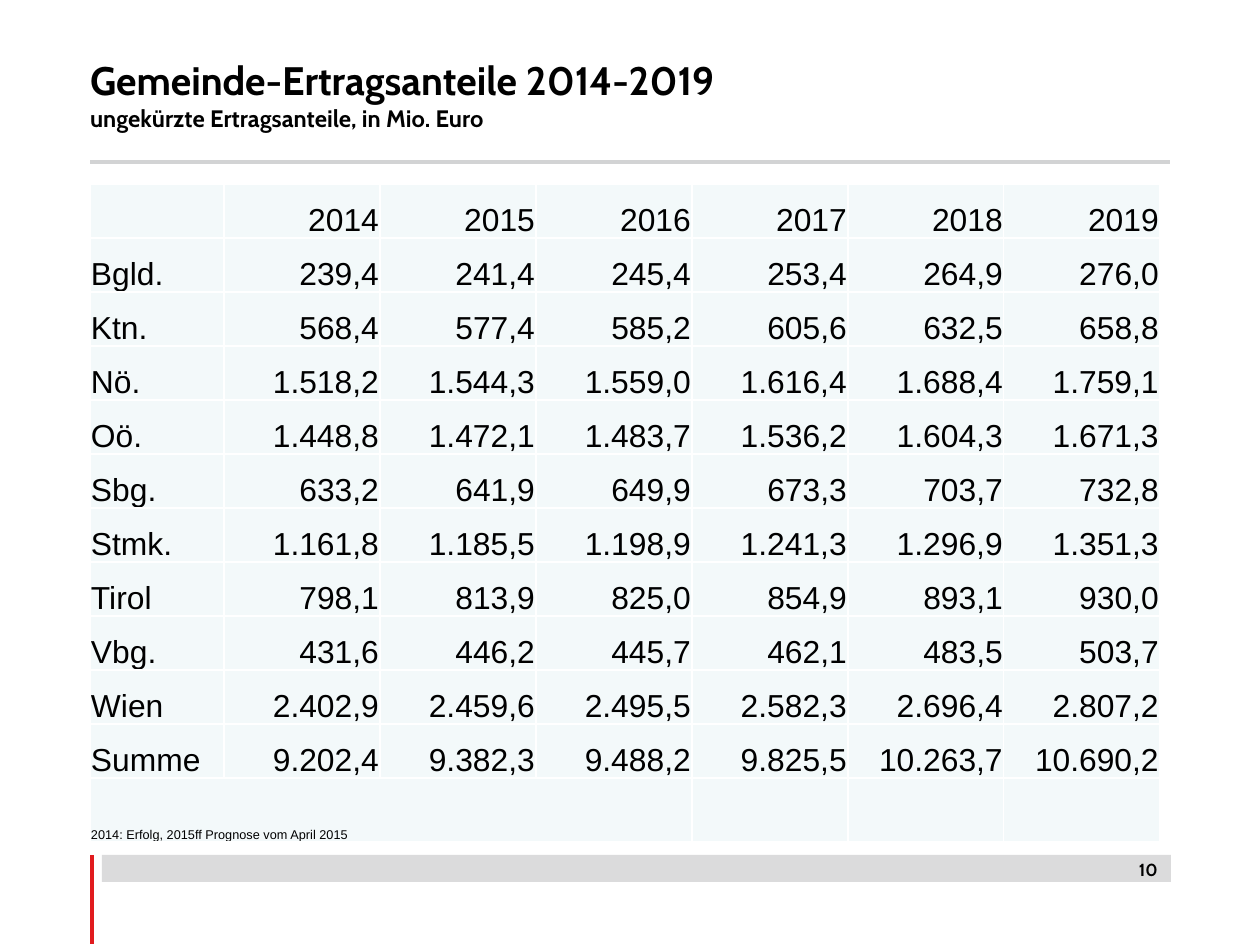
from lxml.etree import SubElement
from pptx import Presentation
from pptx.dml.color import RGBColor
from pptx.enum.shapes import MSO_CONNECTOR, MSO_SHAPE
from pptx.enum.text import MSO_ANCHOR, MSO_AUTO_SIZE, PP_ALIGN
from pptx.oxml import parse_xml
from pptx.oxml.ns import nsdecls, qn
from pptx.util import Pt

EMU_PER_PX = 8000
BLACK = RGBColor(0x00, 0x00, 0x00)
WHITE = RGBColor(0xFF, 0xFF, 0xFF)
GREY = RGBColor(0xD2, 0xD3, 0xD4)
RED = RGBColor(0xE1, 0x1B, 0x1E)
PALE_BLUE = RGBColor(0xF3, 0xF9, 0xFA)

YEARS = ["", "2014", "2015", "2016", "2017", "2018", "2019"]
REVENUE_SHARES = [
    ["Bgld.", "239,4", "241,4", "245,4", "253,4", "264,9", "276,0"],
    ["Ktn.", "568,4", "577,4", "585,2", "605,6", "632,5", "658,8"],
    ["Nö.", "1.518,2", "1.544,3", "1.559,0", "1.616,4", "1.688,4", "1.759,1"],
    ["Oö.", "1.448,8", "1.472,1", "1.483,7", "1.536,2", "1.604,3", "1.671,3"],
    ["Sbg.", "633,2", "641,9", "649,9", "673,3", "703,7", "732,8"],
    ["Stmk.", "1.161,8", "1.185,5", "1.198,9", "1.241,3", "1.296,9", "1.351,3"],
    ["Tirol", "798,1", "813,9", "825,0", "854,9", "893,1", "930,0"],
    ["Vbg.", "431,6", "446,2", "445,7", "462,1", "483,5", "503,7"],
    ["Wien", "2.402,9", "2.459,6", "2.495,5", "2.582,3", "2.696,4", "2.807,2"],
    ["Summe", "9.202,4", "9.382,3", "9.488,2", "9.825,5", "10.263,7", "10.690,2"],
]
SOURCE_NOTE = "2014: Erfolg, 2015ff Prognose vom April 2015"


def px(*lengths):
    return [length * EMU_PER_PX for length in lengths]


def write(paragraph, text, size=20, font="Arial", bold=False, align=PP_ALIGN.LEFT):
    paragraph.alignment = align
    run = paragraph.add_run()
    run.text = text
    run.font.name = font
    run.font.size = Pt(size)
    run.font.bold = bold
    run.font.color.rgb = BLACK


class ReportSlide:
    heading_style = {"font": "Cabin", "bold": True}
    rule_width = Pt(2.84)

    def __init__(self, presentation):
        self.slide = presentation.slides.add_slide(presentation.slide_layouts[5])
        self.shapes = self.slide.shapes

    def rule(self, x1, y1, x2, y2, color):
        line = self.shapes.add_connector(MSO_CONNECTOR.STRAIGHT, *px(x1, y1, x2, y2))
        line.line.color.rgb = color
        line.line.width = self.rule_width
        SubElement(line._element.spPr, qn("a:effectLst"))

    def bar(self, x, y, width, height, color, opacity):
        bar = self.shapes.add_shape(MSO_SHAPE.RECTANGLE, *px(x, y, width, height))
        bar.shadow.inherit = False
        bar.line.fill.background()
        bar.fill.solid()
        bar.fill.fore_color.rgb = color
        srgb = bar._element.spPr.find(".//" + qn("a:srgbClr"))
        SubElement(srgb, qn("a:alpha"), val=str(opacity * 1000))

    def title(self, x, y, width, height, heading, subheading):
        title = self.shapes.title
        title.left, title.top, title.width, title.height = px(x, y, width, height)
        frame = title.text_frame
        frame.margin_left = frame.margin_top = frame.margin_right = frame.margin_bottom = 0
        frame.vertical_anchor = MSO_ANCHOR.MIDDLE
        frame.auto_size = MSO_AUTO_SIZE.NONE
        frame.word_wrap = True
        paragraph = frame.paragraphs[0]
        write(paragraph, heading, size=25, **self.heading_style)
        paragraph.add_line_break()
        write(paragraph, subheading, size=15, **self.heading_style)

    def page_number(self, x, y, width, height, number):
        frame = self.shapes.add_textbox(*px(x, y, width, height)).text_frame
        frame.word_wrap = True
        write(frame.paragraphs[0], number, size=11, align=PP_ALIGN.RIGHT, **self.heading_style)

    def style_cell(self, cell):
        properties = cell._tc.get_or_add_tcPr()
        for side in ("lnL", "lnR", "lnT", "lnB"):
            properties.append(parse_xml(
                f'<a:{side} {nsdecls("a")} w="{Pt(1)}"><a:solidFill>'
                f'<a:srgbClr val="{WHITE}"/></a:solidFill></a:{side}>'))
        cell.fill.solid()
        cell.fill.fore_color.rgb = PALE_BLUE
        cell.vertical_anchor = MSO_ANCHOR.BOTTOM
        cell.margin_left = cell.margin_top = cell.margin_right = EMU_PER_PX
        cell.margin_bottom = 0

    def table(self, x, y, column_widths, row_heights, rows, note, note_span):
        table = self.shapes.add_table(
            len(row_heights), len(column_widths),
            *px(x, y, sum(column_widths), sum(row_heights))).table
        table.first_row = table.horz_banding = False
        for column, width in zip(table.columns, px(*column_widths)):
            column.width = width
        for row, height in zip(table.rows, px(*row_heights)):
            row.height = height
        for cell in table.iter_cells():
            self.style_cell(cell)
        for r, values in enumerate(rows):
            for c, value in enumerate(values):
                if value:
                    align = PP_ALIGN.RIGHT if c else PP_ALIGN.LEFT
                    write(table.cell(r, c).text_frame.paragraphs[0], value, align=align)
        last = len(rows)
        note_cell = table.cell(last, 0)
        note_cell.merge(table.cell(last, note_span - 1))
        write(note_cell.text_frame.paragraphs[0], note, size=8)


def main():
    presentation = Presentation()
    presentation.slide_width, presentation.slide_height = px(1260, 945)
    report = ReportSlide(presentation)
    report.rule(90, 162, 1170, 162, GREY)
    report.rule(92, 855, 92, 944, RED)
    report.bar(102, 855, 1069, 27, GREY, opacity=80)
    report.title(90, 49, 832, 90, "Gemeinde-Ertragsanteile 2014-2019",
                 "ungekürzte Ertragsanteile, in Mio. Euro")
    report.page_number(1089, 853, 80, 43, "10")
    rows = [YEARS] + REVENUE_SHARES
    report.table(90, 184, [134] + [156] * 6, [54] * len(rows) + [64],
                 rows, SOURCE_NOTE, note_span=4)
    presentation.save("out.pptx")


if __name__ == "__main__":
    main()
